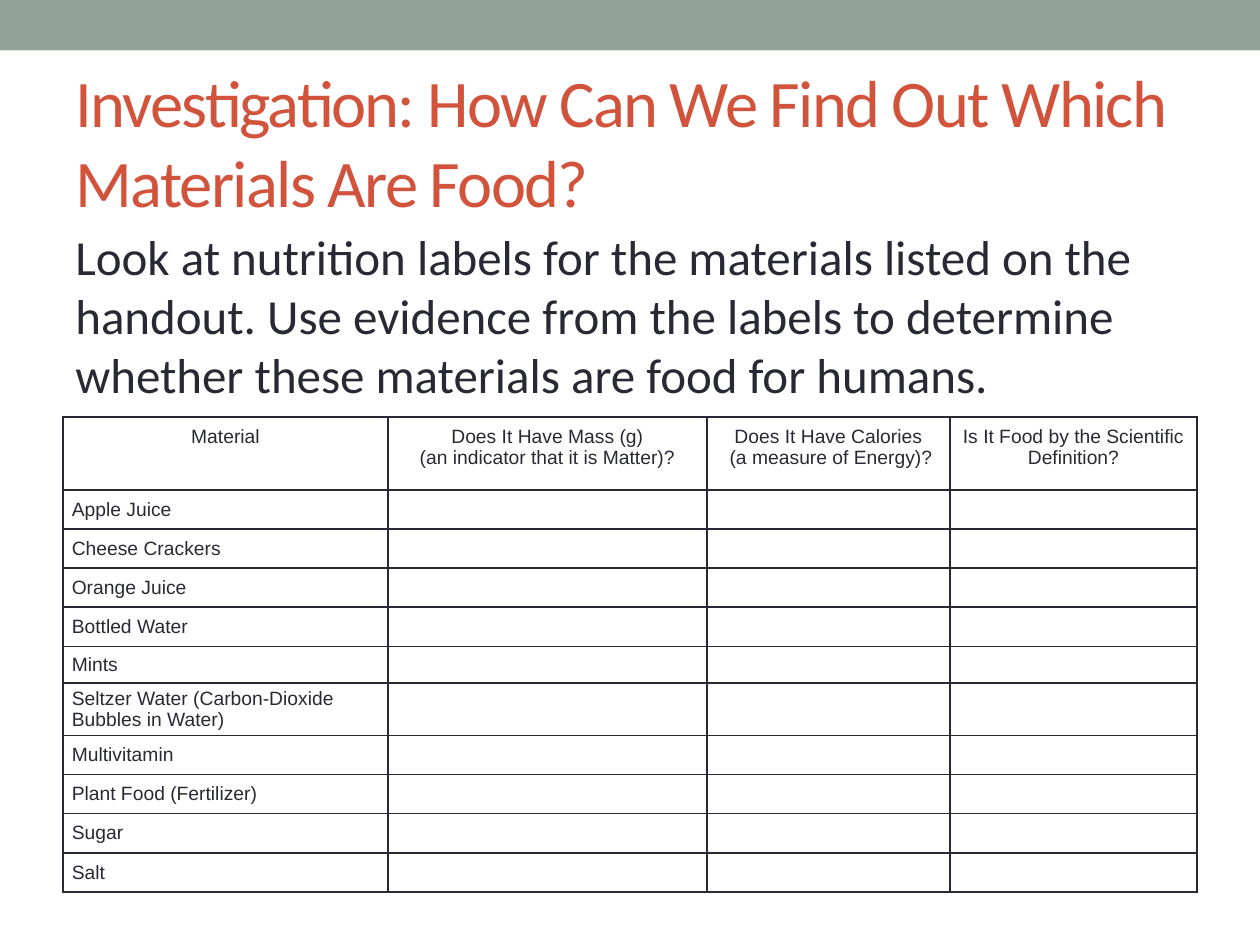
from dataclasses import dataclass

from lxml.etree import SubElement
from pptx import Presentation
from pptx.dml.color import RGBColor
from pptx.enum.shapes import MSO_SHAPE
from pptx.enum.text import MSO_ANCHOR, PP_ALIGN
from pptx.oxml.ns import qn
from pptx.util import Inches, Pt

SAGE = RGBColor(0x93, 0xA2, 0x99)
RUST = RGBColor(0xD2, 0x53, 0x3C)
INK = RGBColor(0x29, 0x29, 0x34)

SLIDE_WIDTH, SLIDE_HEIGHT = Inches(10), Inches(7.5)
COLUMN, ROW = SLIDE_WIDTH / 100, SLIDE_HEIGHT / 75


@dataclass(frozen=True)
class Area:
    """A rectangle counted in grid columns and rows."""
    left: float
    top: float
    width: float
    height: float

    def lengths(self) -> tuple:
        return (round(self.left * COLUMN), round(self.top * ROW),
                round(self.width * COLUMN), round(self.height * ROW))


@dataclass(frozen=True)
class TextStyle:
    font: str
    size: float
    color: RGBColor
    tracking: float = 0


@dataclass(frozen=True)
class Material:
    name: str
    rows: float = 3.1
    spacing: float = 0


TITLE_STYLE = TextStyle("Calibri", 38, RUST, -1)
BODY_STYLE = TextStyle("Calibri", 28, INK)
TABLE_STYLE = TextStyle("Arial", 11, INK)

TITLE = "Investigation: How Can We Find Out Which Materials Are Food?"
TASK = ("Look at nutrition labels for the materials listed on the handout. "
        "Use evidence from the labels to determine whether these materials "
        "are food for humans.")

HEADER_ROWS = 5.8
COLUMN_WIDTHS = (25.8, 25.3, 19.3, 19.6)
HEADERS = (
    ("Material",),
    ("Does It Have Mass (g)", "(an indicator that it is Matter)?"),
    ("Does It Have Calories", " (a measure of Energy)?"),
    ("Is It Food by the Scientific Definition?",),
)
MATERIALS = (
    Material("Apple Juice"),
    Material("Cheese Crackers"),
    Material("Orange Juice"),
    Material("Bottled Water"),
    Material("Mints", rows=2.9),
    Material("Seltzer Water (Carbon-Dioxide Bubbles in Water)", rows=4.2, spacing=3),
    Material("Multivitamin"),
    Material("Plant Food (Fertilizer)"),
    Material("Sugar"),
    Material("Salt"),
)


def add_span(para, text: str, style: TextStyle) -> None:
    span = para.add_run()
    span.text = text
    span.font.name = style.font
    span.font.size = Pt(style.size)
    span.font.color.rgb = style.color
    if style.tracking:
        span.font._element.set("spc", str(round(style.tracking * 100)))


def add_band(page, area: Area) -> None:
    band = page.shapes.add_shape(MSO_SHAPE.RECTANGLE, *area.lengths())
    band.shadow.inherit = False
    band.fill.solid()
    band.fill.fore_color.rgb = SAGE
    band.line.fill.background()


def add_text(page, area: Area, text: str, style: TextStyle, anchor: MSO_ANCHOR) -> None:
    frame = page.shapes.add_textbox(*area.lengths()).text_frame
    frame.word_wrap = True
    frame.vertical_anchor = anchor
    add_span(frame.paragraphs[0], text, style)


def format_cell(cell, vertical_margin: float, anchor: MSO_ANCHOR) -> None:
    cell.margin_left = cell.margin_right = Inches(0.07)
    cell.margin_top = cell.margin_bottom = Inches(vertical_margin)
    cell.vertical_anchor = anchor
    properties = cell._tc.get_or_add_tcPr()
    for side in ("a:lnL", "a:lnR", "a:lnT", "a:lnB"):
        border = SubElement(properties, qn(side), w=str(Pt(1)))
        fill = SubElement(border, qn("a:solidFill"))
        SubElement(fill, qn("a:srgbClr"), val=str(INK))
    cell.fill.background()


def fill_header(cell, lines: tuple[str, ...]) -> None:
    format_cell(cell, 0.07, MSO_ANCHOR.TOP)
    frame = cell.text_frame
    for index, line in enumerate(lines):
        para = frame.add_paragraph() if index else frame.paragraphs[0]
        para.alignment = PP_ALIGN.CENTER
        add_span(para, line, TABLE_STYLE)


def fill_material(cell, material: Material) -> None:
    format_cell(cell, 0, MSO_ANCHOR.MIDDLE)
    para = cell.text_frame.paragraphs[0]
    if material.spacing:
        para.space_before = para.space_after = Pt(material.spacing)
    add_span(para, material.name, TABLE_STYLE)


def fill_answer(cell) -> None:
    """Leave the cell empty, at a text size that keeps its row low."""
    format_cell(cell, 0, MSO_ANCHOR.MIDDLE)
    para = cell.text_frame.paragraphs[0]
    SubElement(para._p, qn("a:endParaRPr"), sz=str(TABLE_STYLE.size * 100))


def add_food_table(page, left: float, top: float) -> None:
    heights = [HEADER_ROWS] + [material.rows for material in MATERIALS]
    area = Area(left, top, sum(COLUMN_WIDTHS), sum(heights))
    table = page.shapes.add_table(len(heights), len(COLUMN_WIDTHS), *area.lengths()).table
    table.first_row = table.horz_banding = False
    for column, width in zip(table.columns, COLUMN_WIDTHS):
        column.width = round(width * COLUMN)
    for row, height in zip(table.rows, heights):
        row.height = round(height * ROW)
    for index, lines in enumerate(HEADERS):
        fill_header(table.cell(0, index), lines)
    for row, material in enumerate(MATERIALS, start=1):
        fill_material(table.cell(row, 0), material)
        for index in range(1, len(COLUMN_WIDTHS)):
            fill_answer(table.cell(row, index))


def main() -> None:
    deck = Presentation()
    deck.slide_width, deck.slide_height = SLIDE_WIDTH, SLIDE_HEIGHT
    page = deck.slides.add_slide(deck.slide_layouts[6])
    add_band(page, Area(0, 0, 100, 4))
    add_text(page, Area(5, 5.8, 91.7, 10.8), TITLE, TITLE_STYLE, MSO_ANCHOR.MIDDLE)
    add_text(page, Area(5, 17.5, 91.7, 53.3), TASK, BODY_STYLE, MSO_ANCHOR.TOP)
    add_food_table(page, 5, 33.1)
    deck.save("out.pptx")


if __name__ == "__main__":
    main()
